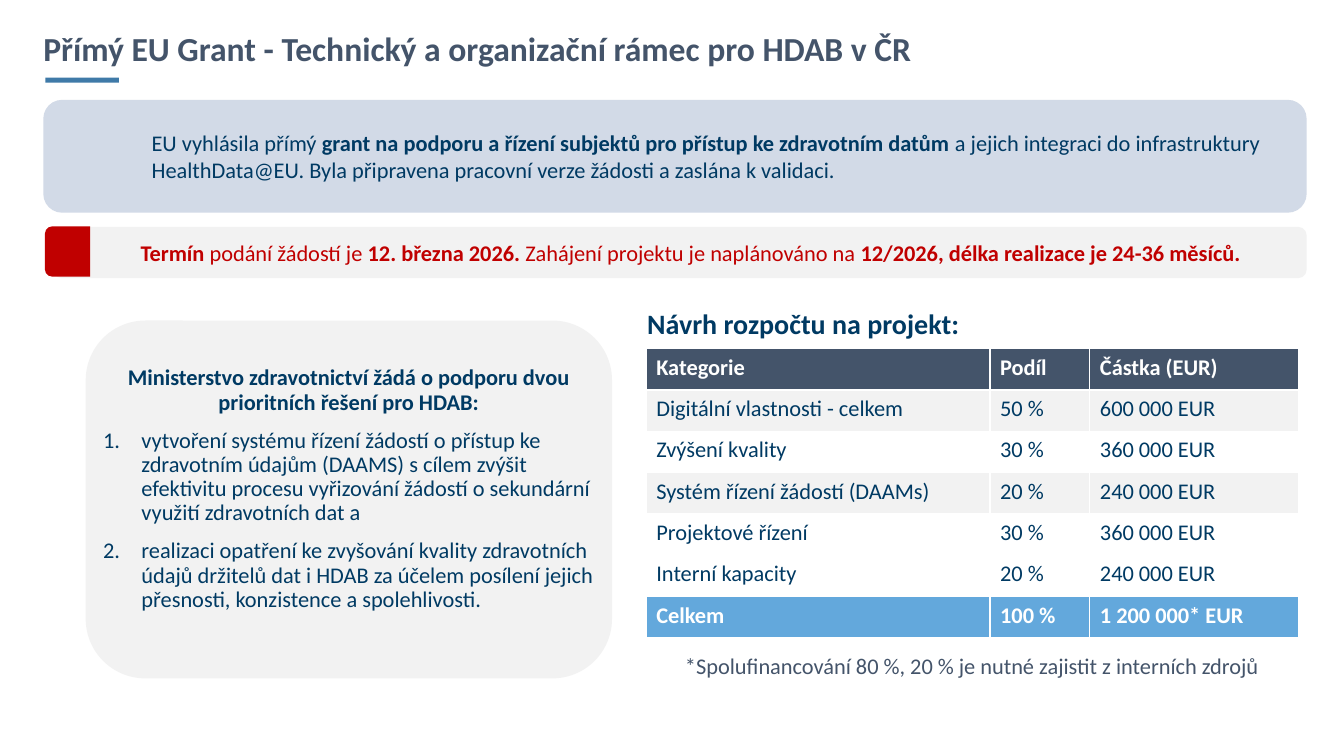
from lxml import etree
from pptx import Presentation
from pptx.dml.color import RGBColor
from pptx.enum.shapes import MSO_SHAPE
from pptx.enum.text import MSO_ANCHOR, PP_ALIGN
from pptx.oxml.ns import qn
from pptx.util import Inches, Pt

LEFT, CENTER = PP_ALIGN.LEFT, PP_ALIGN.CENTER
TOP, MIDDLE = MSO_ANCHOR.TOP, MSO_ANCHOR.MIDDLE
ROUNDED, RECTANGLE = MSO_SHAPE.ROUNDED_RECTANGLE, MSO_SHAPE.RECTANGLE
TAB = MSO_SHAPE.ROUND_2_SAME_RECTANGLE

COLORS = {
    "slate": "44546A", "navy": "003A63", "red": "C00000", "white": "FFFFFF",
    "grey": "F2F2F2", "pale": "D2DAE7", "accent": "3F7AA8", "total": "63A8DC",
}
FONT = "Calibri"

# Content: each span is (text, bold)
TITLE = [("Přímý EU Grant - Technický a organizační rámec pro HDAB v ČR", True)]
BANNER = [
    ("EU vyhlásila přímý ", False),
    ("grant na podporu a řízení subjektů pro přístup ke zdravotním datům ", True),
    ("a jejich integraci do infrastruktury HealthData@EU. Byla připravena "
     "pracovní verze žádosti a zaslána k validaci.", False),
]
DEADLINE = [
    ("Termín ", True),
    ("podání žádostí je ", False),
    ("12. března 2026. ", True),
    ("Zahájení projektu je naplánováno na ", False),
    ("12/2026, délka realizace je 24-36 měsíců.", True),
]
REQUEST = [("Ministerstvo zdravotnictví žádá o podporu dvou prioritních řešení pro HDAB:", True)]
SOLUTIONS = [
    "vytvoření systému řízení žádostí o přístup ke zdravotním údajům (DAAMS) s cílem "
    "zvýšit efektivitu procesu vyřizování žádostí o sekundární využití zdravotních dat a",
    "realizaci opatření ke zvyšování kvality zdravotních údajů držitelů dat i HDAB "
    "za účelem posílení jejich přesnosti, konzistence a spolehlivosti.",
]
BUDGET_TITLE = [("Návrh rozpočtu na projekt:", True)]
BUDGET = [
    ("Kategorie", "Podíl", "Částka (EUR)"),
    ("Digitální vlastnosti - celkem", "50 %", "600 000 EUR"),
    ("Zvýšení kvality", "30 %", "360 000 EUR"),
    ("Systém řízení žádostí (DAAMs)", "20 %", "240 000 EUR"),
    ("Projektové řízení", "30 %", "360 000 EUR"),
    ("Interní kapacity", "20 %", "240 000 EUR"),
    ("Celkem", "100 %", "1 200 000* EUR"),
]
ROW_FILLS = ["slate", "grey", "white", "grey", "white", "white", "total"]
COLUMN_WIDTHS = [3.41, 0.99, 2.07]
ROW_HEIGHT = 0.41
FOOTNOTE = [("*Spolufinancování 80 %, 20 % je nutné zajistit z interních zdrojů", False)]


def color(name):
    return RGBColor.from_string(COLORS[name])


def write(para, spans, ink, size=16, align=LEFT):
    para.alignment = align
    for text, bold in spans:
        span = para.add_run()
        span.text = text
        span.font.name = FONT
        span.font.size = Pt(size)
        span.font.bold = bold
        span.font.color.rgb = color(ink)


def set_frame(frame, insets=(0.1, 0.05, 0.1, 0.05), anchor=TOP, wrap=True):
    frame.margin_left, frame.margin_top, frame.margin_right, frame.margin_bottom = map(Inches, insets)
    frame.vertical_anchor = anchor
    frame.word_wrap = wrap


def add_box(kind, place, fill):
    box = page.shapes.add_shape(kind, *map(Inches, place))
    box.shadow.inherit = False
    box.fill.solid()
    box.fill.fore_color.rgb = color(fill)
    box.line.fill.background()
    return box


def add_label(place, spans, ink, size=16, align=LEFT, wrap=True):
    label = page.shapes.add_textbox(*map(Inches, place))
    set_frame(label.text_frame, wrap=wrap)
    write(label.text_frame.paragraphs[0], spans, ink, size, align)


def number(para, indent):
    properties = para._p.get_or_add_pPr()
    properties.set("marL", str(Inches(indent)))
    properties.set("indent", str(-Inches(indent)))
    etree.SubElement(properties, qn("a:buFont"), typeface="+mj-lt")
    etree.SubElement(properties, qn("a:buAutoNum"), type="arabicPeriod")


deck = Presentation()
deck.slide_width, deck.slide_height = Inches(13.33), Inches(7.5)
page = deck.slides.add_slide(deck.slide_layouts[5])

# Title with its underline
title = page.shapes.title
title.left, title.top, title.width, title.height = map(Inches, (0.33, 0.27, 12.13, 0.52))
set_frame(title.text_frame)
write(title.text_frame.paragraphs[0], TITLE, "slate", 24)
title.text_frame.paragraphs[0].line_spacing = 0.9
add_box(RECTANGLE, (0.45, 0.77, 0.73, 0.05), "accent")

# Grant banner
banner = add_box(ROUNDED, (0.43, 0.99, 12.53, 1.12), "pale")
set_frame(banner.text_frame, (1.02, 0.05, 0.1, 0.05), MIDDLE)
write(banner.text_frame.paragraphs[0], BANNER, "navy")

# Deadline strip with a red tab
deadline = add_box(ROUNDED, (0.53, 2.25, 12.43, 0.51), "grey")
set_frame(deadline.text_frame, (0.31, 0.05, 0.1, 0.05), MIDDLE)
write(deadline.text_frame.paragraphs[0], DEADLINE, "red", align=CENTER)
tab = add_box(TAB, (0.42, 2.27, 0.5, 0.45), "red")
tab.rotation = 270

# Priority solutions
panel = add_box(ROUNDED, (0.85, 3.18, 5.22, 3.55), "grey")
frame = panel.text_frame
set_frame(frame, (0, 0.12, 0, 0.32), MIDDLE)
write(frame.paragraphs[0], REQUEST, "navy", align=CENTER)
frame.paragraphs[0].line_spacing = 0.9
for solution in SOLUTIONS:
    para = frame.add_paragraph()
    number(para, 0.38)
    para.line_spacing = 0.9
    para.space_before = Pt(10)
    write(para, [(solution, False)], "navy")

# Budget table
add_label((6.32, 2.99, 3.54, 0.44), BUDGET_TITLE, "navy", 20, wrap=False)
table = page.shapes.add_table(
    len(BUDGET), len(COLUMN_WIDTHS), Inches(6.41), Inches(3.46),
    Inches(sum(COLUMN_WIDTHS)), Inches(ROW_HEIGHT * len(BUDGET))).table
for column, width in zip(table.columns, COLUMN_WIDTHS):
    column.width = Inches(width)
for row, values, fill in zip(table.rows, BUDGET, ROW_FILLS):
    row.height = Inches(ROW_HEIGHT)
    strong = fill in ("slate", "total")
    for cell, value in zip(row.cells, values):
        cell.fill.solid()
        cell.fill.fore_color.rgb = color(fill)
        write(cell.text_frame.paragraphs[0], [(value, strong)], "white" if strong else "navy")

# Footnote
add_label((6.47, 6.42, 6.34, 0.64), FOOTNOTE, "slate", align=CENTER)

deck.save("out.pptx")
